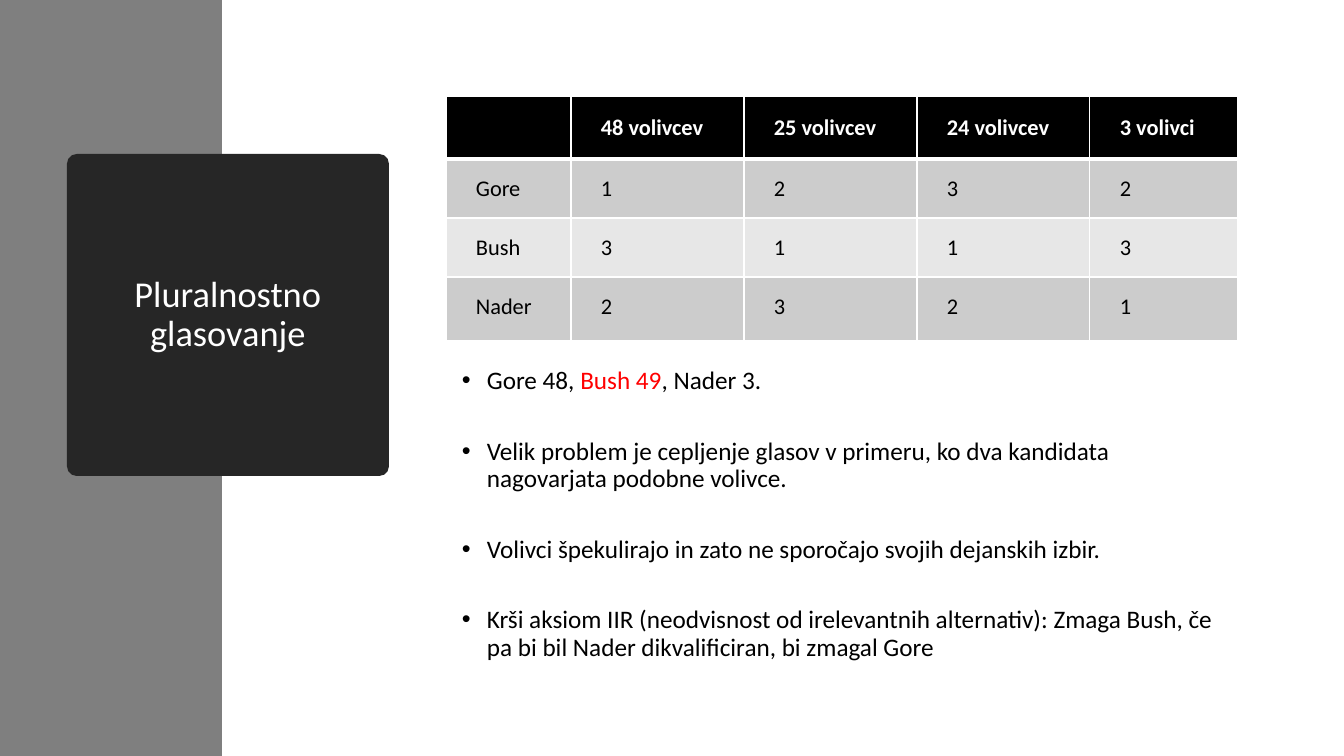
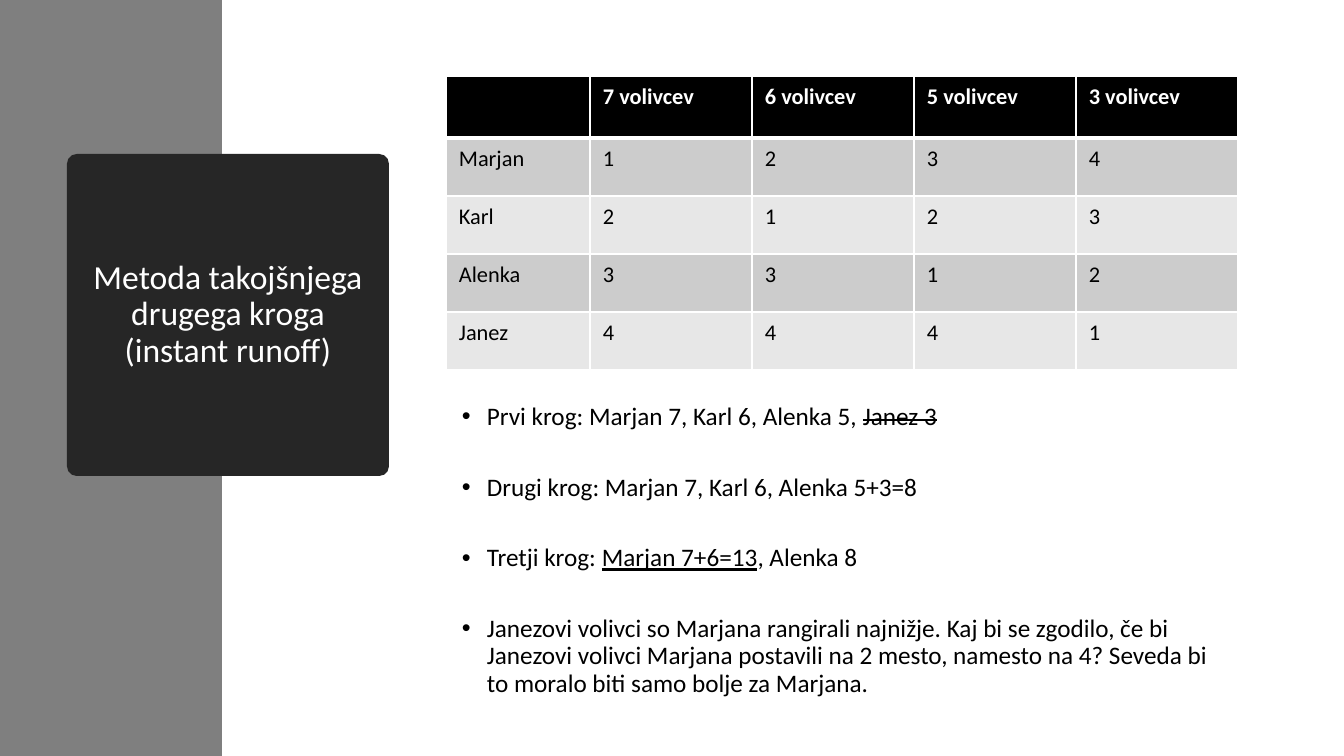
from dataclasses import dataclass

from lxml.etree import SubElement
from pptx import Presentation
from pptx.dml.color import RGBColor
from pptx.enum.shapes import MSO_SHAPE
from pptx.enum.text import MSO_ANCHOR, PP_ALIGN
from pptx.oxml.ns import qn
from pptx.util import Emu, Pt


@dataclass(frozen=True)
class Theme:
    """Colours, type sizes and spacing shared by the slides."""

    font: str = "Calibri"
    band: str = "7F7F7F"
    card: str = "262626"
    header: str = "000000"
    stripes: tuple = ("CCCCCC", "E7E7E7")
    light: str = "FFFFFF"
    ink: str = "000000"
    winner: str = "FF0000"
    cell_size: int = 16
    body_size: int = 18
    line_spacing: float = 0.9
    bullet_gap: int = 31
    rule: int = 1
    header_rule: int = 3


@dataclass(frozen=True)
class Box:
    """A region of the slide in px."""

    left: int
    top: int
    width: int
    height: int

    def emu(self):
        """Return the four lengths in EMU."""
        return px(self.left), px(self.top), px(self.width), px(self.height)


THEME = Theme()
EMU_PER_PX = 914400 / 100.8
SLIDE = Box(0, 0, 1344, 756)
BAND = Box(0, 0, 222, 756)
CARD = Box(67, 154, 322, 322)
CONTENT_LEFT, CONTENT_WIDTH = 446, 792
CARD_RADIUS, CARD_INSET = 10, 18
BULLET_MARGIN, BULLET_HANG = 31, 25

BALLOTS = [
    {
        "title": "Pluralnostno glasovanje",
        "title_size": 26,
        "table_top": 96,
        "columns": [125, 173, 173, 173, 148],
        "rows": [63, 59, 59, 64],
        "header_insets": (30, 18, 18, 18),
        "body_insets": (30, 16, 16, 16),
        "ranking": [
            ["", "48 volivcev", "25 volivcev", "24 volivcev", "3 volivci"],
            ["Gore", "1", "2", "3", "2"],
            ["Bush", "3", "1", "1", "3"],
            ["Nader", "2", "3", "2", "1"],
        ],
        "notes_top": 363,
        "notes_height": 367,
        "notes": [
            [("Gore 48, ", ""), ("Bush 49", "winner"), (", Nader 3.", "")],
            [("Velik problem je cepljenje glasov v primeru, ko dva kandidata "
              "nagovarjata podobne volivce.", "")],
            [("Volivci špekulirajo in zato ne sporočajo svojih dejanskih izbir.", "")],
            [("Krši aksiom IIR (neodvisnost od irelevantnih alternativ): Zmaga Bush, "
              "če pa bi bil Nader dikvalificiran, bi zmagal Gore", "")],
        ],
    },
    {
        "title": "Metoda takojšnjega drugega kroga (instant runoff)",
        "title_size": 24,
        "table_top": 76,
        "columns": [144, 162, 162, 162, 162],
        "rows": [62, 58, 58, 58, 58],
        "header_insets": (13, 7, 13, 7),
        "body_insets": (13, 7, 13, 7),
        "ranking": [
            ["", "7 volivcev", "6 volivcev", "5 volivcev", "3 volivcev"],
            ["Marjan", "1", "2", "3", "4"],
            ["Karl", "2", "1", "2", "3"],
            ["Alenka", "3", "3", "1", "2"],
            ["Janez", "4", "4", "4", "1"],
        ],
        "notes_top": 399,
        "notes_height": 329,
        "notes": [
            [("Prvi krog: Marjan 7, Karl 6, Alenka 5, ", ""), ("Janez 3", "dropped")],
            [("Drugi krog: Marjan 7, Karl 6, Alenka 5+3=8", "")],
            [("Tretji krog: ", ""), ("Marjan 7+6=13", "elected"), (", Alenka 8", "")],
            [("Janezovi volivci so Marjana rangirali najnižje. Kaj bi se zgodilo, če bi "
              "Janezovi volivci Marjana postavili na 2 mesto, namesto na 4? Seveda bi "
              "to moralo biti samo bolje za Marjana.", "")],
        ],
    },
]


def px(length):
    """Turn px into EMU."""
    return Emu(round(length * EMU_PER_PX))


def color(code):
    """Turn a hex code into a colour."""
    return RGBColor.from_string(code)


def style_run(run, size, ink, bold=False):
    """Give a run its font, size and colour."""
    run.font.name = THEME.font
    run.font.size = Pt(size)
    run.font.bold = bold
    run.font.color.rgb = color(ink)


def set_insets(area, insets):
    """Set the left, top, right and bottom insets of a cell or frame."""
    area.margin_left, area.margin_top, area.margin_right, area.margin_bottom = map(px, insets)


def add_panel(slide, preset, box, fill):
    """Draw a flat filled shape in the box."""
    panel = slide.shapes.add_shape(preset, *box.emu())
    panel.shadow.inherit = False
    panel.fill.solid()
    panel.fill.fore_color.rgb = color(fill)
    panel.line.fill.background()
    return panel


def add_title_card(slide, box, title, size):
    """Draw the dark rounded card that holds the title."""
    card = add_panel(slide, MSO_SHAPE.ROUNDED_RECTANGLE, box, THEME.card)
    card.adjustments[0] = round(CARD_RADIUS / box.width, 2)
    frame = card.text_frame
    frame.word_wrap = True
    frame.vertical_anchor = MSO_ANCHOR.MIDDLE
    set_insets(frame, [CARD_INSET] * 4)
    frame.text = title
    heading = frame.paragraphs[0]
    heading.alignment = PP_ALIGN.CENTER
    heading.line_spacing = THEME.line_spacing
    style_run(heading.runs[0], size, THEME.light)


def add_borders(cell, top, bottom):
    """Rule the four sides of a cell."""
    properties = cell._tc.get_or_add_tcPr()
    for side, width in (("L", THEME.rule), ("R", THEME.rule), ("T", top), ("B", bottom)):
        edge = SubElement(properties, qn(f"a:ln{side}"), w=str(Pt(width)))
        paint = SubElement(edge, qn("a:solidFill"))
        SubElement(paint, qn("a:srgbClr"), val=THEME.light)


def add_ranking(slide, box, ballot):
    """Draw the table of voter rankings."""
    ranking = ballot["ranking"]
    table = slide.shapes.add_table(len(ranking), len(ranking[0]), *box.emu()).table
    for column, width in zip(table.columns, ballot["columns"]):
        column.width = px(width)
    for index, (row, height) in enumerate(zip(table.rows, ballot["rows"])):
        row.height = px(height)
        is_header = index == 0
        fill = THEME.header if is_header else THEME.stripes[(index - 1) % 2]
        top = THEME.header_rule if index == 1 else THEME.rule
        bottom = THEME.header_rule if is_header else THEME.rule
        for cell, label in zip(row.cells, ranking[index]):
            add_borders(cell, top, bottom)
            cell.fill.solid()
            cell.fill.fore_color.rgb = color(fill)
            if label:
                set_insets(cell, ballot["header_insets" if is_header else "body_insets"])
                cell.text = label
                style_run(cell.text_frame.paragraphs[0].runs[0], THEME.cell_size,
                          THEME.light if is_header else THEME.ink, is_header)


def add_bullet(paragraph):
    """Give a paragraph its hanging bullet."""
    properties = paragraph._p.get_or_add_pPr()
    properties.set("marL", str(px(BULLET_MARGIN)))
    properties.set("indent", str(-px(BULLET_HANG)))
    SubElement(properties, qn("a:buFont"), typeface="Arial")
    SubElement(properties, qn("a:buChar"), char="•")


def add_notes(slide, box, notes):
    """Write the bulleted remarks below the table."""
    frame = slide.shapes.add_textbox(*box.emu()).text_frame
    frame.word_wrap = True
    for index, phrases in enumerate(notes):
        remark = frame.add_paragraph() if index else frame.paragraphs[0]
        remark.line_spacing = THEME.line_spacing
        remark.space_after = Pt(THEME.bullet_gap)
        add_bullet(remark)
        for words, mark in phrases:
            phrase = remark.add_run()
            phrase.text = words
            style_run(phrase, THEME.body_size, THEME.winner if mark == "winner" else THEME.ink)
            if mark == "elected":
                phrase.font.underline = True
            if mark == "dropped":
                phrase._r.get_or_add_rPr().set("strike", "sngStrike")


def add_ballot_slide(deck, ballot):
    """Build one slide about a voting method."""
    slide = deck.slides.add_slide(deck.slide_layouts[6])
    add_panel(slide, MSO_SHAPE.RECTANGLE, BAND, THEME.band)
    add_title_card(slide, CARD, ballot["title"], ballot["title_size"])
    notes_box = Box(CONTENT_LEFT, ballot["notes_top"], CONTENT_WIDTH, ballot["notes_height"])
    add_notes(slide, notes_box, ballot["notes"])
    table_box = Box(CONTENT_LEFT, ballot["table_top"], CONTENT_WIDTH, sum(ballot["rows"]))
    add_ranking(slide, table_box, ballot)


def main():
    """Build and save the deck."""
    deck = Presentation()
    deck.slide_width, deck.slide_height = px(SLIDE.width), px(SLIDE.height)
    for ballot in BALLOTS:
        add_ballot_slide(deck, ballot)
    deck.save("out.pptx")


if __name__ == "__main__":
    main()
